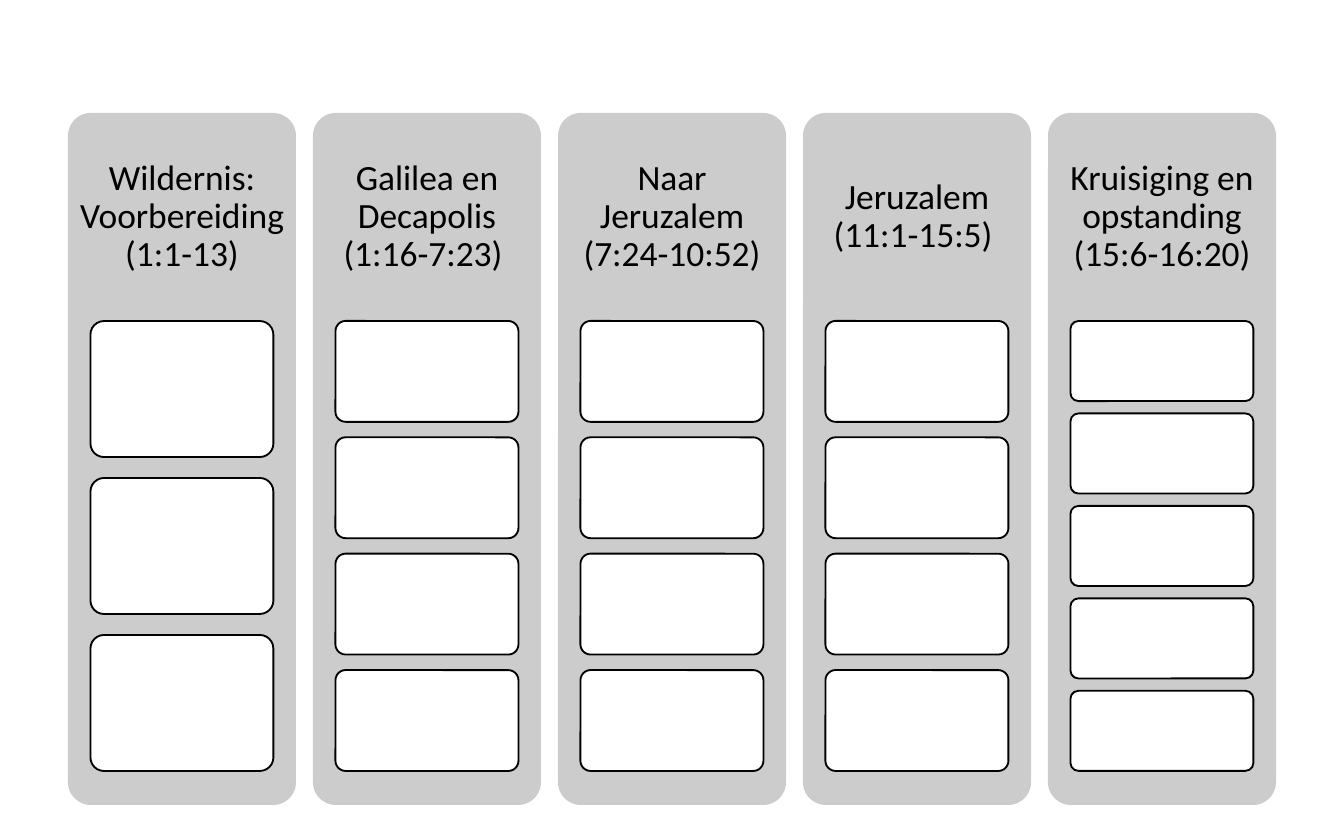
from pptx import Presentation
from pptx.dml.color import RGBColor
from pptx.enum.shapes import MSO_SHAPE
from pptx.enum.text import MSO_ANCHOR, PP_ALIGN
from pptx.util import Inches, Pt

SECTIONS = [
    ("Wildernis: Voorbereiding (1:1-13)", 3),
    ("Galilea en Decapolis\v(1:16-7:23) ", 4),
    ("Naar Jeruzalem (7:24-10:52)", 4),
    ("Jeruzalem (11:1-15:5) ", 4),
    ("Kruisiging en opstanding (15:6-16:20)", 5),
]

SLIDE_W, SLIDE_H = 1344, 840
SCALE = Inches(10) / SLIDE_W
COLUMN_LEFT, COLUMN_TOP, COLUMN_W, COLUMN_H = 68, 113, 228, 692
COLUMN_PITCH = 245
HEADING_H = 208
HEADING_INSET = 10
CARD_W, CARDS_H = 183, 450
GAP_RATIO = 2 / 13


def emu(px):
    return round(px * SCALE)


def color(hex_code):
    return RGBColor.from_string(hex_code)


def add_panel(slide, left, top, width, height, fill, outline=None):
    panel = slide.shapes.add_shape(
        MSO_SHAPE.ROUNDED_RECTANGLE, emu(left), emu(top), emu(width), emu(height))
    panel.adjustments[0] = 0.1
    panel.shadow.inherit = False
    panel.fill.solid()
    panel.fill.fore_color.rgb = color(fill)
    if outline:
        panel.line.color.rgb = color(outline)
        panel.line.width = Pt(1)
    else:
        panel.line.fill.background()


def add_heading(slide, left, heading):
    box = slide.shapes.add_textbox(
        emu(left), emu(COLUMN_TOP), emu(COLUMN_W), emu(HEADING_H))
    frame = box.text_frame
    frame.word_wrap = True
    frame.vertical_anchor = MSO_ANCHOR.MIDDLE
    frame.margin_left = frame.margin_right = emu(HEADING_INSET)
    frame.margin_top = frame.margin_bottom = emu(HEADING_INSET)
    paragraph = frame.paragraphs[0]
    paragraph.text = heading
    paragraph.alignment = PP_ALIGN.CENTER
    paragraph.line_spacing = 0.9
    paragraph.font.name = "Calibri"
    paragraph.font.size = Pt(19)
    paragraph.font.color.rgb = color("000000")


def add_cards(slide, column_left, count):
    height = CARDS_H / (count + (count - 1) * GAP_RATIO)
    left = column_left + (COLUMN_W - CARD_W) / 2
    for row in range(count):
        top = COLUMN_TOP + HEADING_H + row * height * (1 + GAP_RATIO)
        add_panel(slide, left, top, CARD_W, height, "FFFFFF", "000000")


def main():
    deck = Presentation()
    deck.slide_width, deck.slide_height = emu(SLIDE_W), emu(SLIDE_H)
    slide = deck.slides.add_slide(deck.slide_layouts[6])
    for index, (heading, card_count) in enumerate(SECTIONS):
        left = COLUMN_LEFT + index * COLUMN_PITCH
        add_panel(slide, left, COLUMN_TOP, COLUMN_W, COLUMN_H, "CCCCCC")
        add_heading(slide, left, heading)
        add_cards(slide, left, card_count)
    deck.save("out.pptx")


if __name__ == "__main__":
    main()
